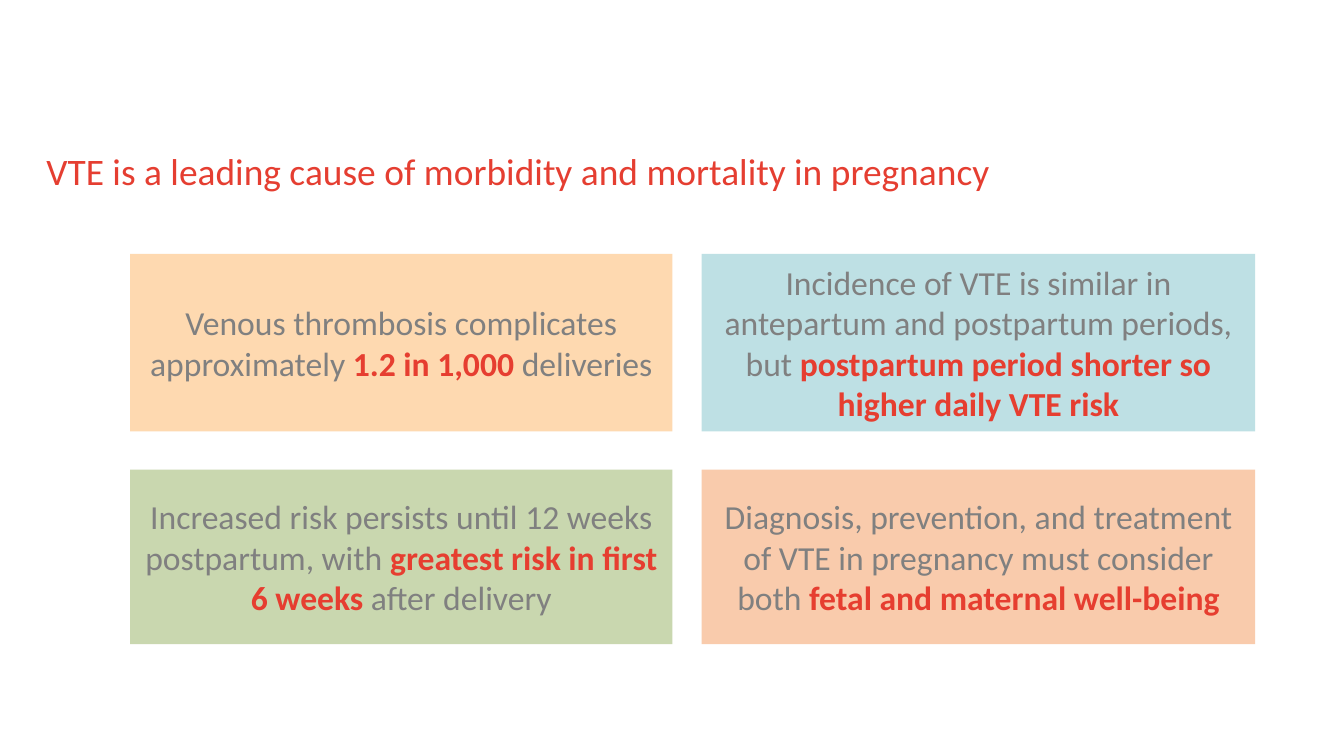
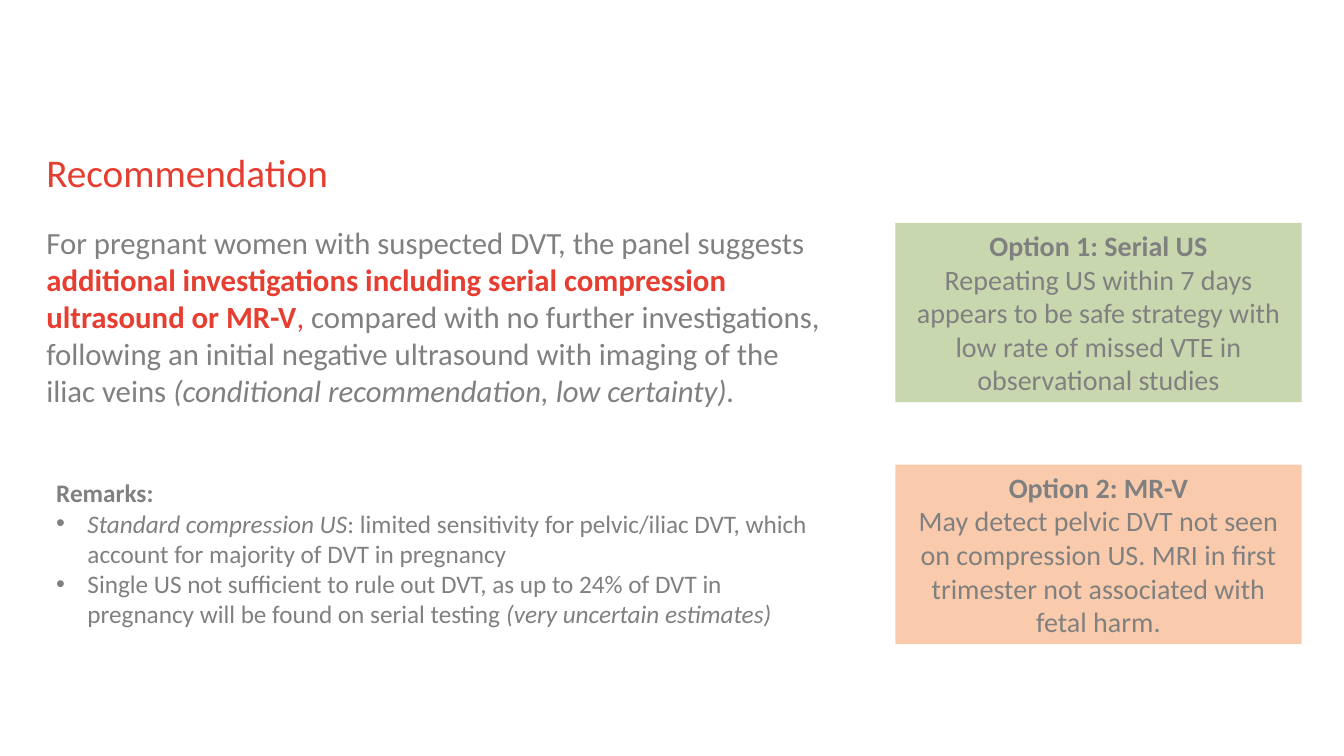
from lxml import etree
from pptx import Presentation
from pptx import util as u
from pptx.dml.color import RGBColor
from pptx.enum import shapes, text
from pptx.oxml.ns import qn

PX = 9144  # EMU in one px, 100 px to the inch
FONT = "Calibri"
TITLE_RED = RGBColor(0xE5, 0x3E, 0x31)
ACCENT_RED = RGBColor(0xE6, 0x3E, 0x30)
GRAY = RGBColor(0x80, 0x80, 0x80)
ORANGE = RGBColor(0xFE, 0xD9, 0xB0)
BLUE = RGBColor(0xBE, 0xE0, 0xE4)
GREEN = RGBColor(0xC9, 0xD7, 0xAF)
PEACH = RGBColor(0xF9, 0xCB, 0xAC)

# Run styles: colour, bold, italic
PLAIN = (GRAY, False, False)
BOLD = (GRAY, True, False)
ITALIC = (GRAY, False, True)
STRONG = (ACCENT_RED, True, False)
RED = (ACCENT_RED, False, False)
HEADING = (TITLE_RED, False, False)

TITLE_BOX = (46, 147, 1200, 78)


def px(*lengths):
    return [u.Emu(length * PX) for length in lengths]


def place(part, box):
    part.left, part.top, part.width, part.height = px(*box)


def set_bullet(paragraph, char=None, hang=0):
    """Give the paragraph a hanging bullet, or none at all."""
    props = paragraph._p.get_or_add_pPr()
    props.set("marL", str(hang * PX))
    props.set("indent", str(-hang * PX))
    if char:
        etree.SubElement(props, qn("a:buFont")).set("typeface", "Arial")
        etree.SubElement(props, qn("a:buChar")).set("char", char)
    else:
        etree.SubElement(props, qn("a:buNone"))


def write(paragraph, parts, size, align=text.PP_ALIGN.LEFT):
    """Fill the paragraph with (wording, style) parts."""
    paragraph.alignment = align
    for wording, (color, bold, italic) in parts:
        run = paragraph.add_run()
        run.text = wording
        font = run.font
        font.name, font.size = FONT, u.Pt(size)
        font.bold, font.italic = bold, italic
        font.color.rgb = color


def next_paragraph(frame, index):
    return frame.add_paragraph() if index else frame.paragraphs[0]


def fill_placeholder(holder, box, parts, size):
    """Place a title or body without margins, its text at the top."""
    place(holder, box)
    frame = holder.text_frame
    frame.margin_left = frame.margin_right = 0
    frame.margin_top = frame.margin_bottom = 0
    frame.vertical_anchor = text.MSO_ANCHOR.TOP
    frame.auto_size = text.MSO_AUTO_SIZE.NONE
    frame.word_wrap = True
    paragraph = frame.paragraphs[0]
    paragraph.space_before = u.Pt(0)
    set_bullet(paragraph)
    write(paragraph, parts, size)


def add_titled_slide(prs, layout, title, size):
    slide = prs.slides.add_slide(prs.slide_layouts[layout])
    fill_placeholder(slide.shapes.title, TITLE_BOX, [(title, HEADING)], size)
    return slide


def add_card(slide, box, color, paragraphs, size):
    """Coloured box with centred text."""
    card = slide.shapes.add_shape(shapes.MSO_SHAPE.RECTANGLE, *px(*box))
    card.shadow.inherit = False
    card.fill.solid()
    card.fill.fore_color.rgb = color
    card.line.fill.background()
    frame = card.text_frame
    frame.word_wrap = True
    frame.vertical_anchor = text.MSO_ANCHOR.MIDDLE
    for index, parts in enumerate(paragraphs):
        write(next_paragraph(frame, index), parts, size, text.PP_ALIGN.CENTER)


def add_fact_grid(slide, box, facts):
    """Two by two cards filling the box."""
    left, top, width, height = box
    column_gap, row_gap = 29, 38
    first_width, first_height = 538, 176
    columns = [(left, first_width),
               (left + first_width + column_gap, width - first_width - column_gap)]
    rows = [(top, first_height),
            (top + first_height + row_gap, height - first_height - row_gap)]
    for index, (color, parts) in enumerate(facts):
        (x, w), (y, h) = columns[index % 2], rows[index // 2]
        add_card(slide, (x, y, w, h), color, [parts], 24)


def add_option_column(slide, box, options):
    """Equal cards, the first at the top and the last at the bottom of the box."""
    left, top, width, height = box
    card_height = 178
    step = (height - card_height) // (len(options) - 1)
    for index, (color, heading, detail) in enumerate(options):
        add_card(slide, (left, top + index * step, width, card_height), color,
                 [[(heading, BOLD)], [(detail, PLAIN)]], 20)


def add_remarks(slide, box, heading, remarks):
    """Bold heading above bulleted remarks."""
    frame = slide.shapes.add_textbox(*px(*box)).text_frame
    frame.word_wrap = True
    write(frame.paragraphs[0], [(heading, BOLD)], 18)
    for parts in remarks:
        remark = frame.add_paragraph()
        set_bullet(remark, "•", 31)
        write(remark, parts, 18)


def build_burden_slide(prs):
    slide = add_titled_slide(
        prs, 5, "VTE is a leading cause of morbidity and mortality in pregnancy", 26.7)
    add_fact_grid(slide, (129, 252, 1116, 387), [
        (ORANGE, [("Venous thrombosis complicates approximately ", PLAIN),
                  ("1.2 in 1,000 ", STRONG),
                  ("deliveries", PLAIN)]),
        (BLUE, [("Incidence of VTE is similar in antepartum and postpartum periods, but ", PLAIN),
                ("postpartum period shorter so higher daily VTE risk", STRONG)]),
        (GREEN, [("Increased risk persists until 12 weeks postpartum, with ", PLAIN),
                 ("greatest risk in first 6 weeks ", STRONG),
                 ("after delivery", PLAIN)]),
        (PEACH, [("Diagnosis, prevention, and treatment of VTE in pregnancy must consider both ",
                  PLAIN),
                 ("fetal and maternal well-being", STRONG)]),
    ])


def build_recommendation_slide(prs):
    slide = add_titled_slide(prs, 1, "Recommendation", 28)

    # Recommendation statement
    fill_placeholder(slide.placeholders[1], (46, 222, 777, 238), [
        ("For pregnant women with suspected DVT, the panel suggests ", PLAIN),
        ("additional investigations including serial compression ultrasound or MR-V", STRONG),
        (", ", RED),
        ("compared with no further investigations, following an initial negative "
         "ultrasound with imaging of the iliac veins ", PLAIN),
        ("(conditional recommendation, low certainty).", ITALIC),
    ], 22)

    # Options on the right
    add_option_column(slide, (888, 221, 403, 418), [
        (GREEN, "Option 1: Serial US",
         "Repeating US within 7 days appears to be safe strategy with low rate of "
         "missed VTE in observational studies"),
        (PEACH, "Option 2: MR-V",
         "May detect pelvic DVT not seen on compression US. MRI in first trimester "
         "not associated with fetal harm."),
    ])

    # Remarks below the statement
    add_remarks(slide, (46, 469, 777, 162), "Remarks:", [
        [("Standard compression US", ITALIC),
         (": limited sensitivity for pelvic/iliac DVT, which account for majority of "
          "DVT in pregnancy", PLAIN)],
        [("Single US not sufficient to rule out DVT, as up to 24% of DVT in pregnancy "
          "will be found on serial testing", PLAIN),
         (" (very uncertain estimates)", ITALIC)],
    ])


def main():
    prs = Presentation()
    prs.slide_width, prs.slide_height = px(1333, 750)
    build_burden_slide(prs)
    build_recommendation_slide(prs)
    prs.save("out.pptx")


if __name__ == "__main__":
    main()
